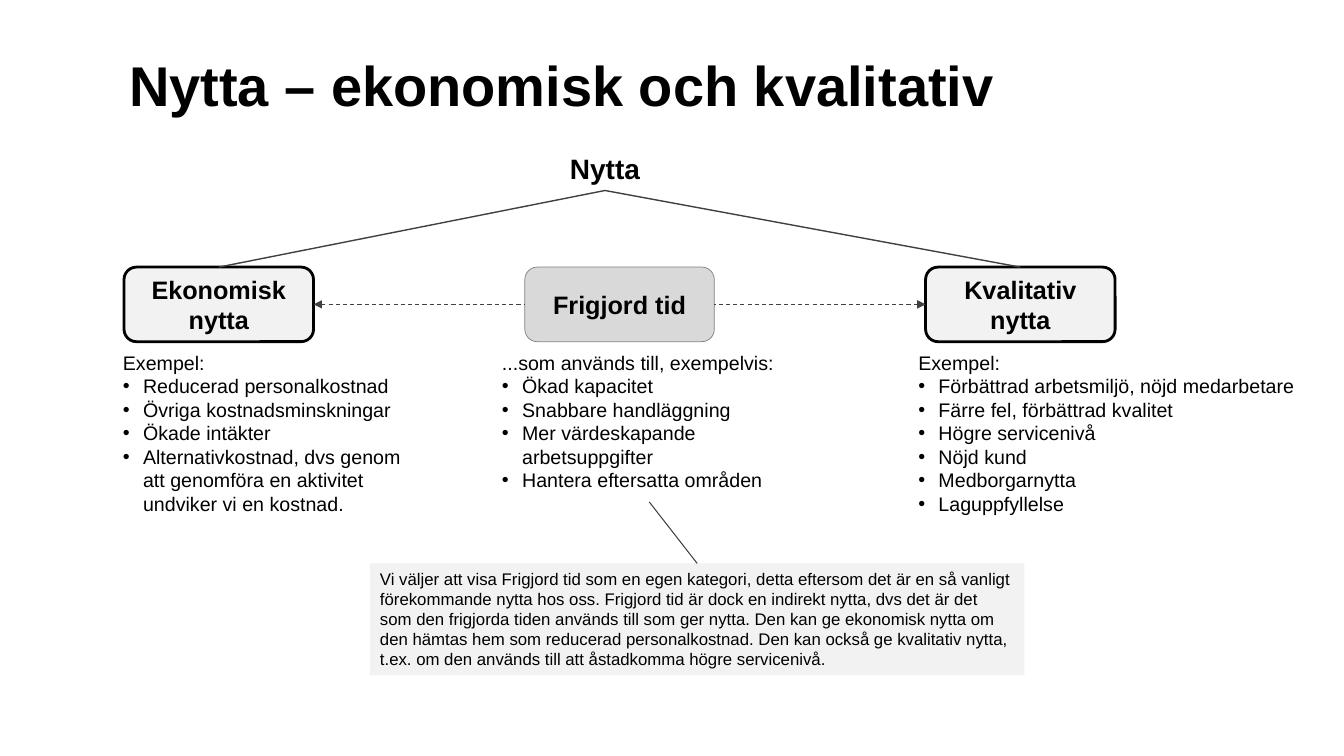
from pptx import Presentation
from pptx.dml.color import RGBColor
from pptx.enum.dml import MSO_LINE_DASH_STYLE as Dash
from pptx.enum.shapes import MSO_CONNECTOR as Connector, MSO_SHAPE as Shape
from pptx.enum.text import MSO_ANCHOR as Anchor, MSO_AUTO_SIZE as AutoSize, PP_ALIGN as Align
from pptx.oxml.ns import qn
from pptx.util import Inches, Pt
from lxml.etree import SubElement

BLACK = RGBColor(0x00, 0x00, 0x00)
DARK_GRAY = RGBColor(0x40, 0x40, 0x40)
MID_GRAY = RGBColor(0x80, 0x80, 0x80)
LIGHT_GRAY = RGBColor(0xD9, 0xD9, 0xD9)
PALE_GRAY = RGBColor(0xF2, 0xF2, 0xF2)

FONT = "Arial"
SLIDE_WIDTH, SLIDE_HEIGHT = 13.33, 7.5
TOP, LEFT, BOTTOM, RIGHT = range(4)

# Category grid: three equal boxes at an even pitch
GRID_LEFT, GRID_TOP, COLUMN_PITCH = 1.23, 2.65, 3.975
BOX_WIDTH, BOX_HEIGHT = 1.88, 0.74
LIST_TOP = 3.43
BULLET_INDENT = 0.2

# Heading, fill, line colour, line width, list box (left, width, height), list lines
CATEGORIES = [
    ("Ekonomisk nytta", PALE_GRAY, BLACK, 2, (1.12, 3.12, 2.02),
     ["Exempel:", "Reducerad personalkostnad", "Övriga kostnadsminskningar",
      "Ökade intäkter",
      "Alternativkostnad, dvs genom att genomföra en aktivitet undviker vi en kostnad."]),
    ("Frigjord tid", LIGHT_GRAY, MID_GRAY, 0.5, (4.88, 3.12, 1.55),
     ["...som används till, exempelvis:", "Ökad kapacitet", "Snabbare handläggning",
      "Mer värdeskapande arbetsuppgifter", "Hantera eftersatta områden"]),
    ("Kvalitativ nytta", PALE_GRAY, BLACK, 2, (9.01, 4, 1.75),
     ["Exempel:", "Förbättrad arbetsmiljö, nöjd medarbetare",
      "Färre fel, förbättrad kvalitet", "Högre servicenivå", "Nöjd kund",
      "Medborgarnytta", "Laguppfyllelse"]),
]
NOTE = (
    "Vi väljer att visa Frigjord tid som en egen kategori, detta eftersom det är en så "
    "vanligt förekommande nytta hos oss. Frigjord tid är dock en indirekt nytta, dvs det "
    "är det som den frigjorda tiden används till som ger nytta. Den kan ge ekonomisk nytta "
    "om den hämtas hem som reducerad personalkostnad. Den kan också ge kvalitativ nytta, "
    "t.ex. om den används till att åstadkomma högre servicenivå."
)


def add_bullet(paragraph):
    properties = paragraph._p.get_or_add_pPr()
    properties.set("marL", str(Inches(BULLET_INDENT)))
    properties.set("indent", str(-Inches(BULLET_INDENT)))
    SubElement(properties, qn("a:buFont")).set("typeface", FONT)
    SubElement(properties, qn("a:buChar")).set("char", "•")


def write_text(shape, lines, size, bold=False, align=Align.LEFT, anchor=Anchor.TOP,
               bulleted=False, grow=False):
    """Fill a shape with lines; when bulleted, all but the first get a bullet."""
    frame = shape.text_frame
    frame.word_wrap = True
    frame.vertical_anchor = anchor
    frame.auto_size = AutoSize.SHAPE_TO_FIT_TEXT if grow else AutoSize.NONE
    for index, line in enumerate(lines):
        paragraph = frame.add_paragraph() if index else frame.paragraphs[0]
        paragraph.alignment = align
        if bulleted and index:
            add_bullet(paragraph)
        run = paragraph.add_run()
        run.text = line
        run.font.name = FONT
        run.font.size = Pt(size)
        run.font.bold = bold
        run.font.color.rgb = BLACK


def add_text_box(slide, box, lines, size, **text_format):
    shape = slide.shapes.add_textbox(*map(Inches, box))
    write_text(shape, lines, size, grow=True, **text_format)
    return shape


def add_panel(slide, kind, box, fill, line=None, line_width=0):
    shape = slide.shapes.add_shape(kind, *map(Inches, box))
    shape.shadow.inherit = False
    shape.fill.solid()
    shape.fill.fore_color.rgb = fill
    if line is None:
        shape.line.fill.background()
    else:
        shape.line.color.rgb = line
        shape.line.width = Pt(line_width)
    return shape


def join(slide, start, start_side, end, end_side, width, arrow=False):
    """Join two shapes; an arrow is dashed and points at the start shape."""
    connector = slide.shapes.add_connector(Connector.STRAIGHT, 0, 0, 0, 0)
    connector.begin_connect(start, start_side)
    connector.end_connect(end, end_side)
    connector.line.color.rgb = DARK_GRAY
    connector.line.width = Pt(width)
    if arrow:
        connector.line.dash_style = Dash.DASH
        SubElement(connector.line._get_or_add_ln(), qn("a:headEnd")).set("type", "triangle")
    SubElement(connector._element.spPr, qn("a:effectLst"))


def add_title(slide, box):
    title = slide.shapes.title
    title.left, title.top, title.width, title.height = map(Inches, box)
    write_text(title, ["Nytta – ekonomisk och kvalitativ"], 40, bold=True,
               anchor=Anchor.MIDDLE)


def add_category(slide, box, category):
    """Place a heading box and the list below it."""
    name, fill, line, line_width, (list_left, list_width, list_height), lines = category
    heading = add_panel(slide, Shape.ROUNDED_RECTANGLE, box, fill, line, line_width)
    write_text(heading, [name], 18, bold=True, align=Align.CENTER, anchor=Anchor.MIDDLE)
    details = add_text_box(slide, (list_left, LIST_TOP, list_width, list_height), lines, 14,
                           bulleted=True)
    return heading, details


def add_note(slide, box):
    note = add_panel(slide, Shape.RECTANGLE, box, PALE_GRAY)
    write_text(note, [NOTE], 12, grow=True)
    return note


def add_benefit_tree(slide):
    # Root and categories
    root = add_text_box(slide, (5.09, 1.45, 1.82, 0.44), ["Nytta"], 20, bold=True,
                        align=Align.CENTER)
    parts = [
        add_category(slide, (GRID_LEFT + column * COLUMN_PITCH, GRID_TOP, BOX_WIDTH, BOX_HEIGHT),
                     category)
        for column, category in enumerate(CATEGORIES)
    ]
    (economic, _), (freed_time, freed_details), (qualitative, _) = parts
    note = add_note(slide, (3.67, 5.59, 6.49, 1.11))

    # Branches, arrows and the line to the note
    for outer, outer_side, inner_side in ((economic, RIGHT, LEFT), (qualitative, LEFT, RIGHT)):
        join(slide, root, BOTTOM, outer, TOP, 1)
        join(slide, outer, outer_side, freed_time, inner_side, 0.75, arrow=True)
    join(slide, freed_details, BOTTOM, note, TOP, 0.75)


def main():
    presentation = Presentation()
    presentation.slide_width = Inches(SLIDE_WIDTH)
    presentation.slide_height = Inches(SLIDE_HEIGHT)
    slide = presentation.slides.add_slide(presentation.slide_layouts.get_by_name("Title Only"))
    add_title(slide, (1.18, 0.39, 11.27, 0.88))
    add_benefit_tree(slide)
    presentation.save("out.pptx")


if __name__ == "__main__":
    main()
